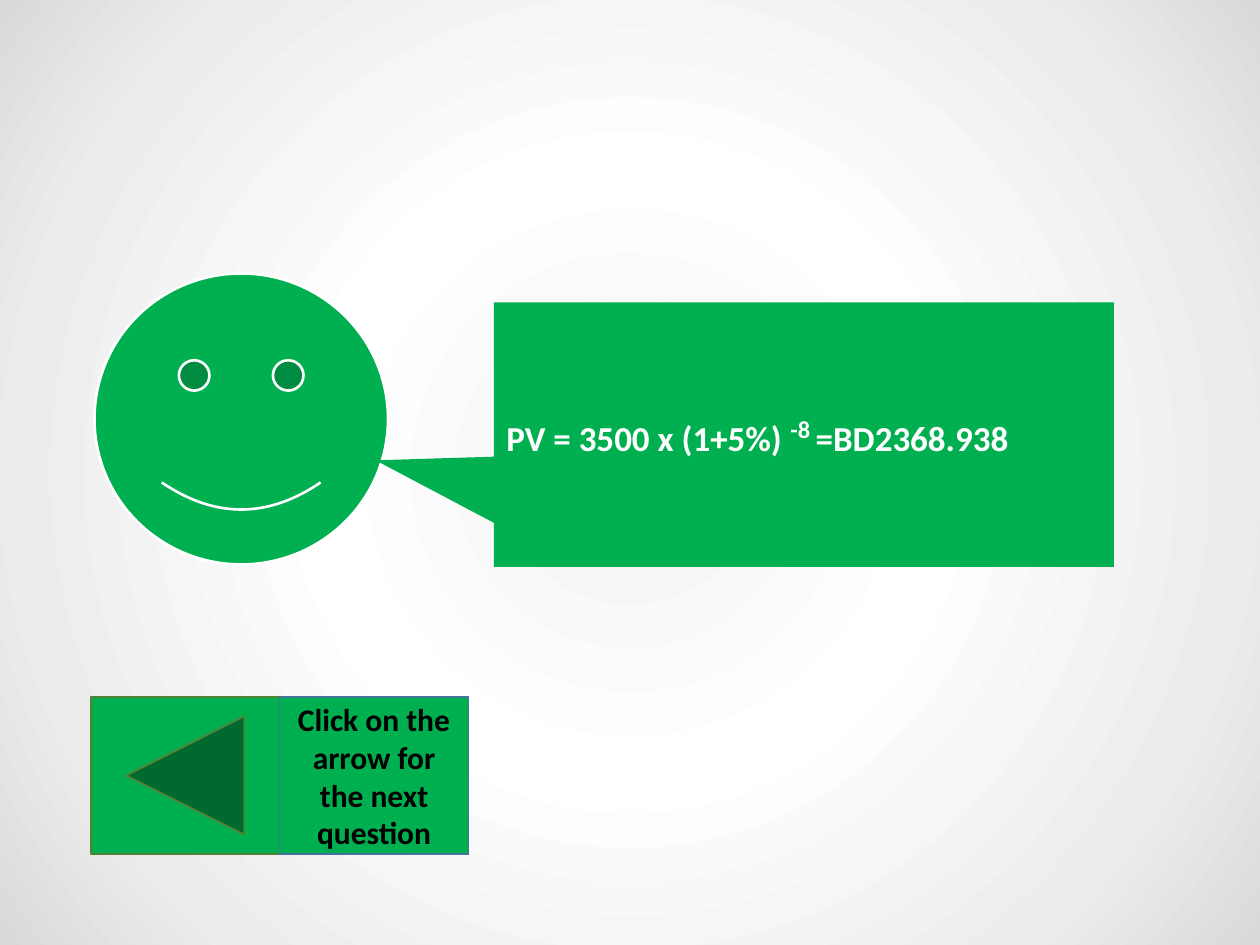
from lxml.etree import fromstring
from pptx import Presentation
from pptx.dml.color import RGBColor
from pptx.enum.shapes import MSO_SHAPE
from pptx.enum.text import MSO_ANCHOR, PP_ALIGN
from pptx.oxml.ns import qn
from pptx.util import Inches, Pt

GREEN, WHITE, BLACK = "00B050", "FFFFFF", "000000"
BACKGROUND_STOPS = [(0, "F2F2F2"), (39, WHITE), (78, "ECECEC"), (100, "D9D9D9")]

# Button row: two equal cells side by side
BUTTON_LEFT, BUTTON_TOP, BUTTON_WIDTH, BUTTON_HEIGHT = 0.72, 5.53, 1.5, 1.25
button_boxes = [
    (BUTTON_LEFT + column * BUTTON_WIDTH, BUTTON_TOP, BUTTON_WIDTH, BUTTON_HEIGHT)
    for column in range(2)
]

# Runs are (text, size, superscript percent)
SHAPES = [
    {"kind": MSO_SHAPE.SMILEY_FACE, "box": (0.75, 2.17, 2.33, 2.31),
     "adjustments": [0.047], "line": (WHITE, 1.5)},
    {"kind": MSO_SHAPE.ACTION_BUTTON_BACK_OR_PREVIOUS, "box": button_boxes[0],
     "line": ("548235", 1)},
    {"kind": MSO_SHAPE.RECTANGULAR_CALLOUT, "box": (3.92, 2.4, 4.92, 2.1),
     "adjustments": [-0.691, 0.097], "color": WHITE, "align": PP_ALIGN.LEFT,
     "runs": [("PV = 3500 x (1+5%) ", 20, 0), ("-8 ", 24, 30),
              ("=BD2368.938", 20, 0)]},
    {"kind": MSO_SHAPE.PENTAGON, "box": button_boxes[1], "adjustments": [0],
     "flip": True, "line": ("43739E", 1), "color": BLACK, "align": PP_ALIGN.CENTER,
     "runs": [("Click on the arrow for the next question", 18, 0)]},
]


def rgb(value):
    return RGBColor.from_string(value)


def paint_background(slide):
    """Radial gradient centred on the slide."""
    fill = slide.background.fill
    fill.solid()
    fill.fore_color.rgb = rgb(WHITE)
    stops = "".join(
        f'<a:gs pos="{position * 1000}"><a:srgbClr val="{color}"/></a:gs>'
        for position, color in BACKGROUND_STOPS
    )
    gradient = fromstring(
        '<a:gradFill xmlns:a="http://schemas.openxmlformats.org/drawingml/2006/main"'
        f' rotWithShape="1"><a:gsLst>{stops}</a:gsLst><a:path path="circle">'
        '<a:fillToRect l="50000" t="50000" r="50000" b="50000"/></a:path></a:gradFill>'
    )
    solid = next(slide._element.iter(qn("a:solidFill")))
    solid.getparent().replace(solid, gradient)


def write_text(shape, item):
    frame = shape.text_frame
    frame.word_wrap = True
    frame.vertical_anchor = MSO_ANCHOR.MIDDLE
    paragraph = frame.paragraphs[0]
    paragraph.alignment = item["align"]
    for text, size, superscript in item["runs"]:
        run = paragraph.add_run()
        run.text = text
        for name, value in {"name": "Calibri", "size": Pt(size), "bold": True}.items():
            setattr(run.font, name, value)
        run.font.color.rgb = rgb(item["color"])
        if superscript:
            run._r.get_or_add_rPr().set("baseline", str(superscript * 1000))


def add_item(slide, item):
    shape = slide.shapes.add_shape(item["kind"], *map(Inches, item["box"]))
    shape.shadow.inherit = False
    shape.fill.solid()
    shape.fill.fore_color.rgb = rgb(GREEN)
    for index, value in enumerate(item.get("adjustments", [])):
        shape.adjustments[index] = value
    if "line" in item:
        color, width = item["line"]
        shape.line.color.rgb = rgb(color)
        shape.line.width = Pt(width)
    else:
        shape.line.fill.background()
    if item.get("flip"):
        shape._element.spPr.find(qn("a:xfrm")).set("flipH", "1")
    if "runs" in item:
        write_text(shape, item)


def main():
    presentation = Presentation()
    presentation.slide_width, presentation.slide_height = Inches(10), Inches(7.5)
    slide = presentation.slides.add_slide(presentation.slide_layouts[6])
    paint_background(slide)
    for item in SHAPES:
        add_item(slide, item)
    presentation.save("out.pptx")


if __name__ == "__main__":
    main()
